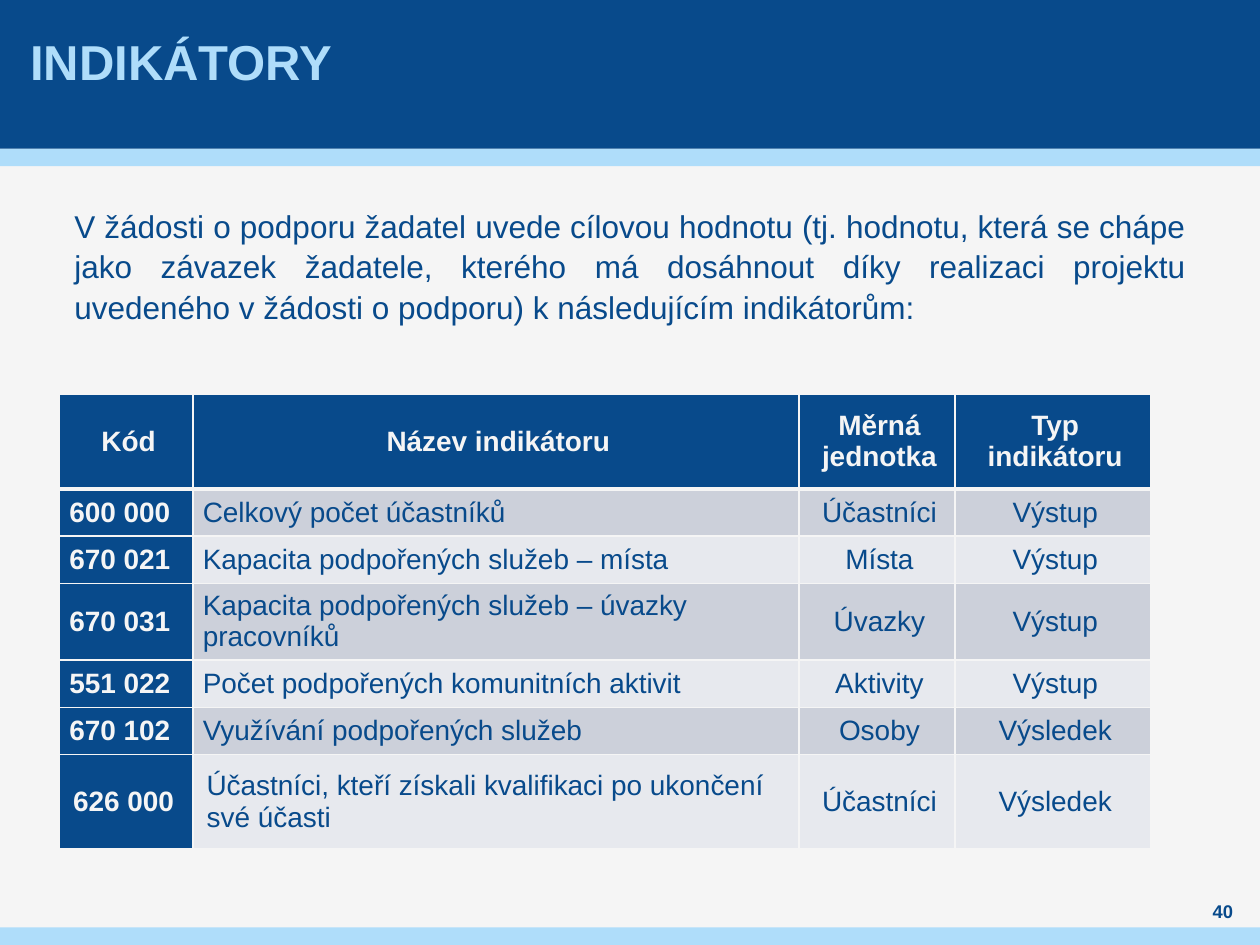
from lxml import etree
from pptx import Presentation
from pptx import util as u
from pptx.dml.color import RGBColor
from pptx.enum import shapes, text
from pptx.oxml.ns import qn

THEME = {
    "font": "Arial",
    "navy": "084A8B", "sky": "AFDDFA", "paper": "F5F5F5",
    "bands": ("CCD0DA", "E7E9EE"),
    "title": 28, "body": 18, "cell": 16, "number": 10.5,
}
LEFT, CENTER, JUSTIFY = text.PP_ALIGN.LEFT, text.PP_ALIGN.CENTER, text.PP_ALIGN.JUSTIFY
TOP, MIDDLE = text.MSO_ANCHOR.TOP, text.MSO_ANCHOR.MIDDLE

deck = Presentation()
deck.slide_width, deck.slide_height = u.Inches(10), u.Inches(7.5)
slide = deck.slides.add_slide(deck.slide_layouts[6])
slide.background.fill.solid()
slide.background.fill.fore_color.rgb = RGBColor.from_string(THEME["paper"])

# Grid: 100 columns by 75 rows
COL, ROW = deck.slide_width / 100, deck.slide_height / 75


def area(left, top, width, height):
    return [round(n * step) for n, step in zip((left, top, width, height), (COL, ROW) * 2)]


def write(paragraph, words, size, color, bold=False, **layout):
    paragraph.text = words
    for name, value in layout.items():
        setattr(paragraph, name, value)
    font_format = {"name": THEME["font"], "size": u.Pt(size), "bold": bold}
    for name, value in font_format.items():
        setattr(paragraph.font, name, value)
    paragraph.font.color.rgb = RGBColor.from_string(color)


# Header and footer bands
for top, height, color in ((11.8, 1.4, "sky"), (0, 11.8, "navy"), (73.6, 1.4, "sky")):
    band = slide.shapes.add_shape(shapes.MSO_SHAPE.RECTANGLE, *area(0, top, 100, height))
    band.shadow.inherit = False
    band.fill.solid()
    band.fill.fore_color.rgb = RGBColor.from_string(THEME[color])
    band.line.fill.background()

# Title, introduction and page number
intro = (
    "V žádosti o podporu žadatel uvede cílovou hodnotu (tj. hodnotu, která se chápe "
    "jako závazek žadatele, kterého má dosáhnout díky realizaci projektu "
    "uvedeného v žádosti o podporu) k následujícím indikátorům:"
)
passages = (
    ((2, -1.1, 92.1, 11.8), 0.04, MIDDLE, "INDIKÁTORY", "title", "sky", True,
     {"alignment": LEFT}),
    ((5.9, 16.2, 88.2, 50.4), 0, TOP, intro, "body", "navy", False,
     {"alignment": JUSTIFY, "line_spacing": 1.07, "space_after": u.Pt(8)}),
    ((94.5, 71.3, 5.1, 2), 0, MIDDLE, "40", "number", "navy", True,
     {"alignment": CENTER}),
)
for place, inset, anchor, words, size, color, bold, layout in passages:
    frame = slide.shapes.add_textbox(*area(*place)).text_frame
    frame_format = {
        "word_wrap": True, "vertical_anchor": anchor,
        "margin_left": u.Inches(inset), "margin_right": u.Inches(inset),
        "margin_top": 0, "margin_bottom": 0,
    }
    for name, value in frame_format.items():
        setattr(frame, name, value)
    write(frame.paragraphs[0], words, THEME[size], THEME[color], bold, **layout)

# Indicator table
indicators = (
    ("Kód", "Název indikátoru", "Měrná jednotka", "Typ indikátoru"),
    ("600 000", "Celkový počet účastníků", "Účastníci", "Výstup"),
    ("670 021", "Kapacita podpořených služeb – místa", "Místa", "Výstup"),
    ("670 031", "Kapacita podpořených služeb – úvazky pracovníků", "Úvazky", "Výstup"),
    ("551 022", "Počet podpořených komunitních aktivit", "Aktivity", "Výstup"),
    ("670 102", "Využívání podpořených služeb", "Osoby", "Výsledek"),
    ("626 000", "Účastníci, kteří získali kvalifikaci po ukončení své účasti",
     "Účastníci", "Výsledek"),
)
widths = (10.6, 48.1, 12.4, 15.5)
heights = (7.5, 3.75, 3.75, 6.1, 3.75, 3.75, 7.5)
table = slide.shapes.add_table(
    len(heights), len(widths), *area(4.7, 31.3, sum(widths), sum(heights))).table
for column, width in zip(table.columns, widths):
    column.width = round(width * COL)
for row, height in zip(table.rows, heights):
    row.height = round(height * ROW)

for r, indicator in enumerate(indicators):
    inset = u.Inches(0.07 if r == len(indicators) - 1 else 0.04)
    for c, words in enumerate(indicator):
        cell = table.cell(r, c)
        strong = r == 0 or c == 0
        cell_format = {
            "vertical_anchor": MIDDLE, "margin_left": inset, "margin_right": inset,
            "margin_top": 0, "margin_bottom": 0,
        }
        for name, value in cell_format.items():
            setattr(cell, name, value)

        # Borders, heavier between the heading and the first row
        properties = cell._tc.get_or_add_tcPr()
        for side in "LRTB":
            heavy = (r, side) in ((0, "B"), (1, "T"))
            edge = etree.SubElement(properties, qn("a:ln" + side), w=str(u.Pt(3 if heavy else 1)))
            ink = etree.SubElement(edge, qn("a:solidFill"))
            etree.SubElement(ink, qn("a:srgbClr"), val=THEME["paper"])
        cell.fill.solid()
        cell.fill.fore_color.rgb = RGBColor.from_string(
            THEME["navy"] if strong else THEME["bands"][(r - 1) % 2])

        entry = cell.text_frame.paragraphs[0]
        indent = entry._p.get_or_add_pPr()
        indent.set("marL", str(u.Inches(0.04)))
        indent.set("indent", "0")
        write(entry, words, THEME["cell"], THEME["paper" if strong else "navy"], strong,
              alignment=CENTER if r == 0 or c > 1 else LEFT,
              space_before=u.Pt(0), space_after=u.Pt(3))

deck.save("out.pptx")
